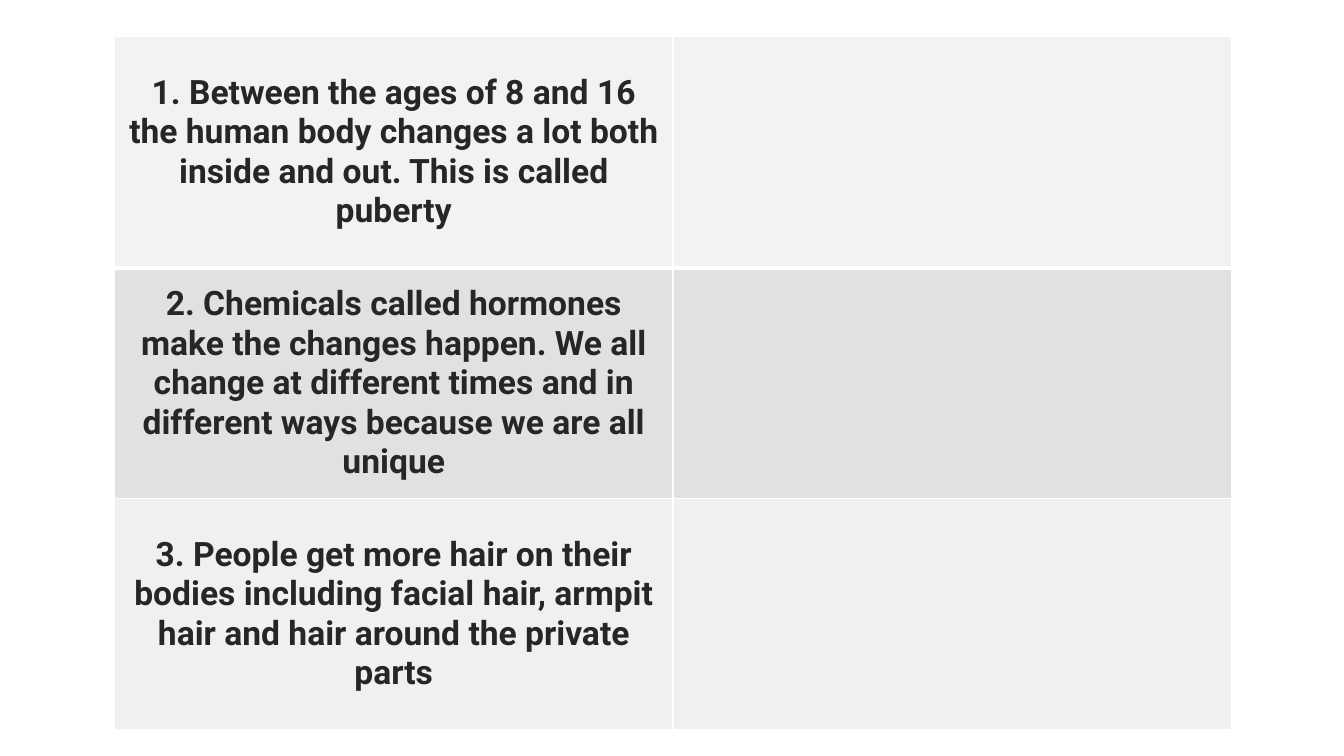
from lxml.etree import SubElement
from pptx import Presentation
from pptx.dml.color import RGBColor as RGB
from pptx.enum.text import MSO_ANCHOR as Anchor, PP_ALIGN as Align
from pptx.oxml.ns import qn
from pptx.util import Pt

PX = 9525  # EMU per px, 96 px to the inch
WHITE = RGB(0xFF, 0xFF, 0xFF)
INK = RGB(0x26, 0x26, 0x26)
PALE = RGB(0xF2, 0xF2, 0xF2)
GREY = RGB(0xE1, 0xE1, 0xE1)
LIGHT = RGB(0xF0, 0xF0, 0xF0)

FACTS = [
    ("1. Between the ages of 8 and 16 the human body changes a lot both "
     "inside and out. This is called puberty", PALE),
    ("2. Chemicals called hormones make the changes happen. We all change at "
     "different times and in different ways because we are all unique", GREY),
    ("3. People get more hair on their bodies including facial hair, armpit "
     "hair and hair around the private parts", LIGHT),
]


class Deck:
    font = "Roboto"
    size = 24

    def __init__(self, wide, high):
        self.prs = Presentation()
        self.prs.slide_width = wide * PX
        self.prs.slide_height = high * PX
        self.slide = self.prs.slides.add_slide(self.prs.slide_layouts[6])

    def edge(self, cell, side, width):
        line = SubElement(cell._tc.get_or_add_tcPr(), qn("a:ln" + side),
                          w=str(Pt(width)))
        fill = SubElement(line, qn("a:solidFill"))
        SubElement(fill, qn("a:srgbClr"), val=str(WHITE))

    def cell(self, cell, text, color, top, bottom):
        # Borders come before the fill in the cell properties
        for side, width in zip("LRTB", (1, 1, top, bottom)):
            self.edge(cell, side, width)
        cell.fill.solid()
        cell.fill.fore_color.rgb = color
        cell.vertical_anchor = Anchor.MIDDLE
        if text:
            para = cell.text_frame.paragraphs[0]
            para.alignment = Align.CENTER
            run = para.add_run()
            run.text = text
            run.font.name = self.font
            run.font.size = Pt(self.size)
            run.font.bold = True
            run.font.color.rgb = INK

    def table(self, x, y, wide, high, rows):
        """Draw facts on the left with an empty answer cell on the right."""
        grid = self.slide.shapes.add_table(
            len(rows), 2, x * PX, y * PX,
            2 * wide * PX, len(rows) * high * PX).table
        for col in grid.columns:
            col.width = wide * PX
        for i, (text, color) in enumerate(rows):
            grid.rows[i].height = high * PX
            # A thick rule sets off the first row
            top = 3 if i == 1 else 1
            bottom = 3 if i == 0 else 1
            for j, words in enumerate((text, "")):
                self.cell(grid.cell(i, j), words, color, top, bottom)


def main():
    deck = Deck(1280, 720)

    # Facts table
    deck.table(109, 35, 532, 220, FACTS)

    deck.prs.save("out.pptx")


if __name__ == "__main__":
    main()
